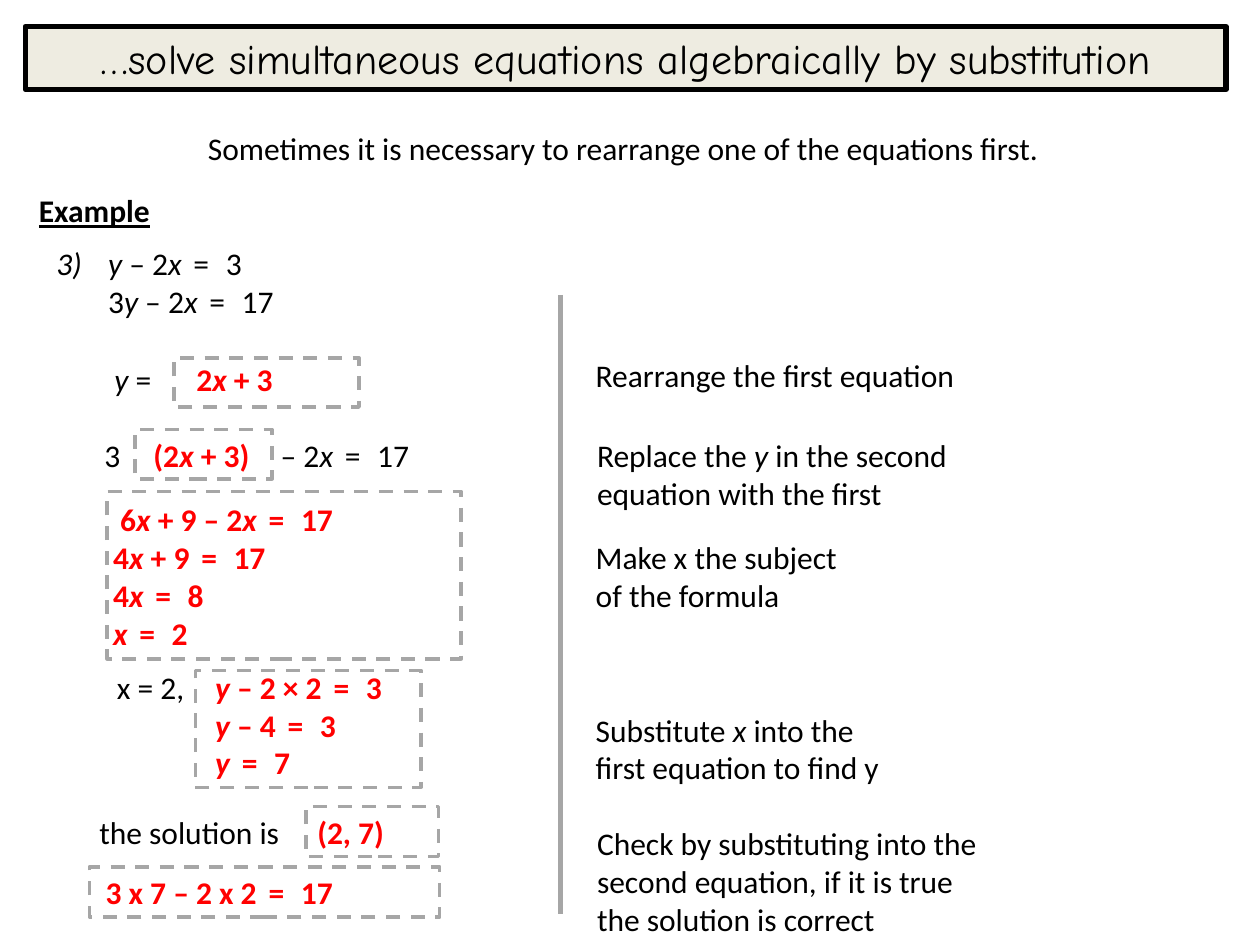
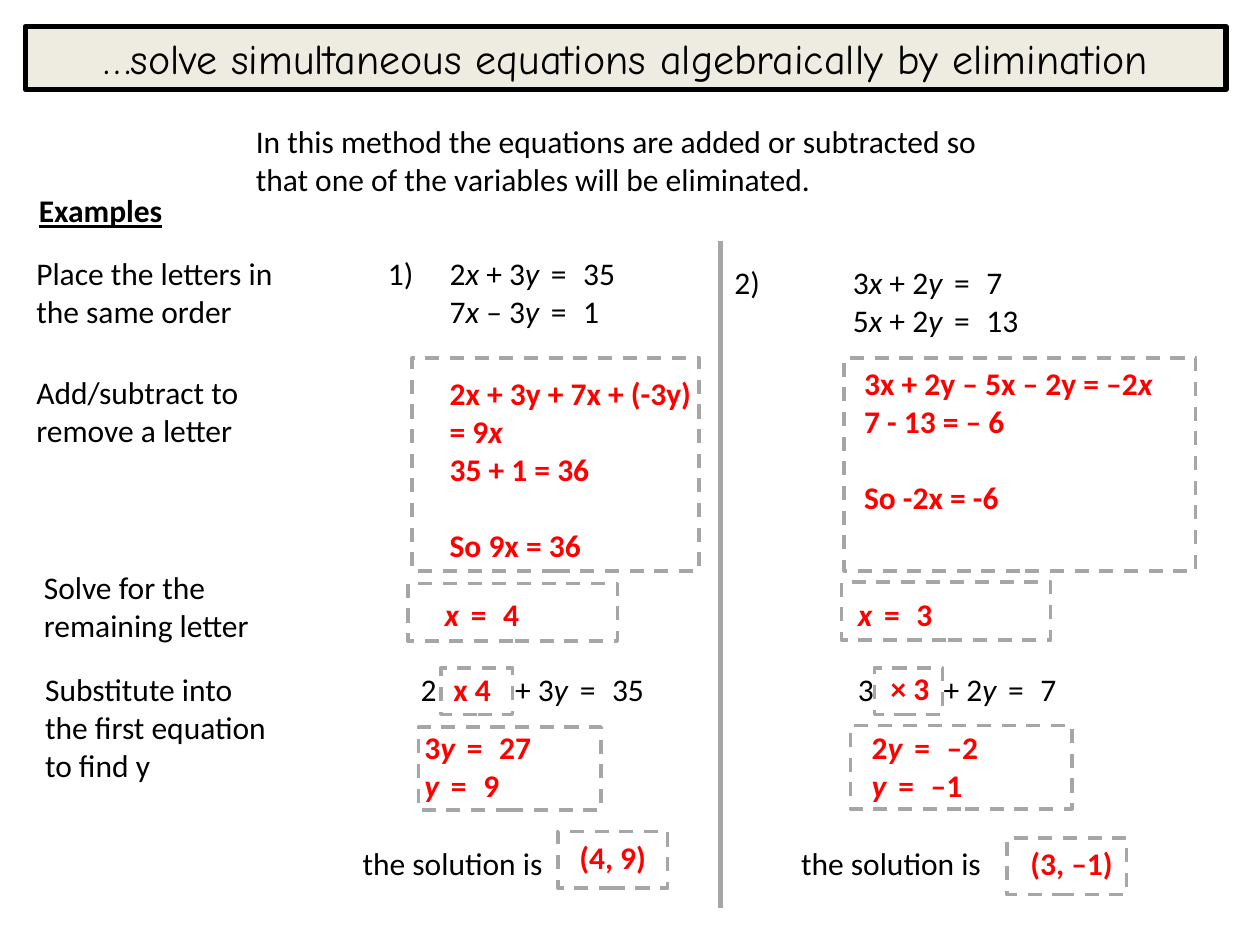
from dataclasses import dataclass
from typing import NamedTuple

from lxml.etree import SubElement
from pptx import Presentation
from pptx.dml.color import RGBColor
from pptx.enum.dml import MSO_LINE
from pptx.enum.shapes import MSO_CONNECTOR, MSO_SHAPE
from pptx.enum.text import MSO_ANCHOR, MSO_AUTO_SIZE, PP_ALIGN
from pptx.oxml.ns import qn
from pptx.util import Inches, Pt

COLOURS = {"ink": "000000", "answer": "FF0000", "band": "EEECE1", "guide": "A6A6A6"}
TITLE_FONT, TEXT_FONT = "Comic Neue", "Calibri"
TEXT_SIZE = 18
LINE_GAP = Pt(22)
WIDE_EQUALS = " == "
WIDE_SPACING = "270"

# The slide is a grid of 100 columns by 75 rows.
SLIDE_WIDTH, SLIDE_HEIGHT = Inches(10), Inches(7.5)
COLUMN, ROW = SLIDE_WIDTH / 100, SLIDE_HEIGHT / 75


class Area(NamedTuple):
    column: float
    row: float
    columns: float
    rows: float = 4


class Divider(NamedTuple):
    column: float
    top: float
    bottom: float


class Note(NamedTuple):
    """Text where *stars* mark italics, == a widely spaced =, an empty line a gap."""
    text: str
    area: Area


@dataclass
class Lesson:
    title: str
    intro: Note
    heading: str
    notes: list[Note]
    answers: list[Note]
    frames: list[Area]
    divider: Divider


TITLE_AREA = Area(2, 2.1, 95.3, 5)
HEADING_AREA = Area(2.1, 14.7, 25)

SUBSTITUTION = Lesson(
    title="…solve simultaneous equations algebraically by substitution",
    intro=Note("Sometimes it is necessary to rearrange one of the equations first.",
               Area(15.5, 9.7, 70)),
    heading="Example",
    notes=[
        Note("*3)*", Area(3.5, 18.9, 5)),
        Note("*y* – 2*x* == 3\n3*y* – 2*x* == 17", Area(7.6, 18.9, 22, 7.1)),
        Note("*y* =", Area(8.1, 28.1, 6.5)),
        Note("3", Area(7.3, 34.1, 4)),
        Note("– 2*x* == 17", Area(21.3, 34.1, 15)),
        Note("x = 2,", Area(8.3, 52.5, 9)),
        Note("the solution is", Area(6.9, 64, 18)),
        Note("Rearrange the first equation", Area(46.3, 27.8, 33)),
        Note("Replace the *y* in the second equation with the first",
             Area(46.4, 34.1, 30.3, 7.1)),
        Note("Make x the subject of the formula", Area(46.3, 42.2, 21.3, 7.1)),
        Note("Substitute *x* into the first equation to find y",
             Area(46.3, 55.9, 25, 7.1)),
        Note("Check by substituting into the second equation, if it is true "
             "the solution is correct", Area(46.4, 64.9, 32.3, 10.1)),
    ],
    answers=[
        Note("2*x* + 3", Area(14.6, 28.1, 10)),
        Note("(2*x* + 3)", Area(11.2, 34.1, 11)),
        Note(" 6*x* + 9 – 2*x* == 17\n4*x* + 9 == 17\n4*x* == 8\n*x* == 2",
             Area(8, 39.2, 22.3, 13.1)),
        Note("*y* – 2 × 2 == 3\n*y* – 4 == 3\n*y* == 7", Area(16.1, 52.5, 17, 10.1)),
        Note("(2, 7)", Area(24.2, 64, 9)),
        Note("3 x 7 – 2 x 2 == 17", Area(7.4, 68.8, 24)),
    ],
    frames=[
        Area(13.8, 28.4, 14.7, 3.9),
        Area(10.7, 34.1, 10.9, 3.9),
        Area(8.5, 39, 28.1, 13.3),
        Area(15.5, 53.2, 17.9, 9.3),
        Area(24.3, 64, 10.5),
        Area(7.1, 68.8, 27.8),
    ],
    divider=Divider(44.5, 23.4, 72.5),
)

ELIMINATION = Lesson(
    title="…solve simultaneous equations algebraically by elimination",
    intro=Note("In this method the equations are added or subtracted so that one "
               "of the variables will be eliminated.", Area(19.3, 9.2, 60.6, 7.1)),
    heading="Examples",
    notes=[
        Note("Place the letters in the same order", Area(1.9, 19.7, 21.6, 7.1)),
        Note("Add/subtract to remove a letter", Area(1.9, 29.1, 19.1, 7.1)),
        Note("Solve for the remaining letter", Area(2.5, 44.6, 21.7, 7.1)),
        Note("Substitute into the first equation to find y",
             Area(2.6, 52.7, 20.3, 10.1)),
        Note("1)", Area(29.8, 19.7, 5)),
        Note("2*x* + 3*y* == 35\n7*x* – 3*y* == 1", Area(34.7, 19.7, 20, 7.1)),
        Note("2", Area(32.4, 52.7, 4)),
        Note("+ 3*y* == 35", Area(39.9, 52.7, 15)),
        Note("the solution is", Area(27.8, 66.5, 18)),
        Note("2)", Area(57.3, 20.4, 5)),
        Note("3*x* + 2*y* == 7\n5*x* + 2*y* == 13", Area(66.7, 20.4, 20, 7.1)),
        Note("3", Area(67.1, 52.7, 4)),
        Note("+ 2*y* == 7", Area(73.9, 52.7, 15)),
        Note("the solution is", Area(62.6, 66.5, 18)),
    ],
    answers=[
        Note("2x + 3y + 7x + (-3y)\n= 9*x*\n35 + 1 = 36\n\nSo 9x = 36",
             Area(34.7, 29.2, 22.5, 16.2)),
        Note("*x* == 4", Area(34.3, 46.7, 10)),
        Note("x 4", Area(35, 52.7, 6)),
        Note("3*y* == 27\n*y* == 9", Area(32.7, 57.3, 14, 7.1)),
        Note("(4, 9)", Area(45, 66, 9)),
        Note("3x + 2y – 5x – 2y = –2*x*\n7 - 13 = – 6\n\nSo -2x = -6",
             Area(67.6, 28.4, 27, 13.1)),
        Note("*x* == 3", Area(67.1, 46.7, 10)),
        Note("× 3", Area(69.7, 52.6, 6)),
        Note("2*y* == –2\n*y* == –1", Area(68.2, 57.3, 14, 7.1)),
        Note("(3, –1)", Area(80.8, 66.5, 10)),
    ],
    frames=[
        Area(32.7, 28.4, 22.8, 16.9),
        Area(32.4, 46.3, 16.6, 4.6),
        Area(35, 53, 5.7, 3.7),
        Area(33.2, 57.7, 14.5, 6.6),
        Area(44.3, 66, 8.7, 4.5),
        Area(67, 28.4, 27.9, 16.9),
        Area(66.8, 46.2, 16.6, 4.6),
        Area(69.4, 53, 5.4, 3.7),
        Area(67.5, 57.6, 17.6, 6.6),
        Area(79.9, 66.5, 9.5, 4.5),
    ],
    divider=Divider(57.2, 19.1, 72.1),
)


def colour(name: str) -> RGBColor:
    return RGBColor.from_string(COLOURS[name])


def on_slide(area: Area) -> tuple[int, int, int, int]:
    return (round(area.column * COLUMN), round(area.row * ROW),
            round(area.columns * COLUMN), round(area.rows * ROW))


def place(shape, area: Area) -> None:
    shape.left, shape.top, shape.width, shape.height = on_slide(area)


def style_run(run, ink: str, size: float = TEXT_SIZE, face: str = TEXT_FONT,
              bold: bool = False, italic: bool = False) -> None:
    font = run.font
    font.name, font.size = face, Pt(size)
    font.bold, font.italic = bold, italic
    font.color.rgb = colour(ink)


def add_run(paragraph, text: str, ink: str, bold: bool, italic: bool = False):
    run = paragraph.add_run()
    run.text = text
    style_run(run, ink, bold=bold, italic=italic)
    return run


def write_line(paragraph, line: str, ink: str, bold: bool) -> None:
    """Italics alternate at each star; wide equals signs get letter spacing."""
    for number, part in enumerate(line.split("*")):
        for position, piece in enumerate(part.split(WIDE_EQUALS)):
            if position:
                equals = add_run(paragraph, " = ", ink, bold)
                equals.font._element.set("spc", WIDE_SPACING)
            if piece:
                add_run(paragraph, piece, ink, bold, italic=number % 2 == 1)


def write(frame, text: str, ink: str, bold: bool = False) -> None:
    frame.word_wrap = True
    frame.auto_size = MSO_AUTO_SIZE.SHAPE_TO_FIT_TEXT
    for index, block in enumerate(text.split("\n\n")):
        for number, line in enumerate(block.split("\n")):
            first = index == number == 0
            paragraph = frame.paragraphs[0] if first else frame.add_paragraph()
            opens_gap = index > 0 and number == 0
            paragraph.space_before = LINE_GAP if opens_gap else Pt(0)
            write_line(paragraph, line, ink, bold)


def add_note(slide, note: Note, ink: str = "ink", bold: bool = False):
    box = slide.shapes.add_textbox(*on_slide(note.area))
    write(box.text_frame, note.text, ink, bold)
    return box


def set_title(slide, text: str) -> None:
    title = slide.shapes.title
    place(title, TITLE_AREA)
    title.fill.solid()
    title.fill.fore_color.rgb = colour("band")
    title.line.color.rgb = colour("ink")
    title.line.width = Pt(3)
    frame = title.text_frame
    frame.text = text
    frame.auto_size = MSO_AUTO_SIZE.NONE
    frame.vertical_anchor = MSO_ANCHOR.MIDDLE
    frame.paragraphs[0].alignment = PP_ALIGN.CENTER
    style_run(frame.paragraphs[0].runs[0], "ink", size=24, face=TITLE_FONT)


def set_intro(slide, intro: Note) -> None:
    body = slide.placeholders[1]
    place(body, intro.area)
    write(body.text_frame, intro.text, "ink")
    properties = body.text_frame.paragraphs[0]._p.get_or_add_pPr()
    properties.set("marL", "0")
    properties.set("indent", "0")
    SubElement(properties, qn("a:buNone"))


def add_frame(slide, area: Area) -> None:
    frame = slide.shapes.add_shape(MSO_SHAPE.RECTANGLE, *on_slide(area))
    frame.shadow.inherit = False
    frame.fill.background()
    frame.line.color.rgb = colour("guide")
    frame.line.width = Pt(2)
    frame.line.dash_style = MSO_LINE.DASH


def add_divider(slide, divider: Divider) -> None:
    x = round(divider.column * COLUMN)
    rule = slide.shapes.add_connector(MSO_CONNECTOR.STRAIGHT, x, round(divider.top * ROW),
                                      x, round(divider.bottom * ROW))
    rule.line.color.rgb = colour("guide")
    rule.line.width = Pt(3)
    SubElement(rule._element.spPr, qn("a:effectLst"))


def add_lesson(deck, lesson: Lesson) -> None:
    slide = deck.slides.add_slide(deck.slide_layouts[1])
    set_title(slide, lesson.title)
    set_intro(slide, lesson.intro)
    heading = add_note(slide, Note(lesson.heading, HEADING_AREA), bold=True)
    heading.text_frame.paragraphs[0].runs[0].font.underline = True
    for note in lesson.notes:
        add_note(slide, note)
    for answer in lesson.answers:
        add_note(slide, answer, ink="answer", bold=True)
    for area in lesson.frames:
        add_frame(slide, area)
    add_divider(slide, lesson.divider)


def main() -> None:
    deck = Presentation()
    deck.slide_width, deck.slide_height = SLIDE_WIDTH, SLIDE_HEIGHT
    for lesson in (SUBSTITUTION, ELIMINATION):
        add_lesson(deck, lesson)
    deck.save("out.pptx")


if __name__ == "__main__":
    main()
